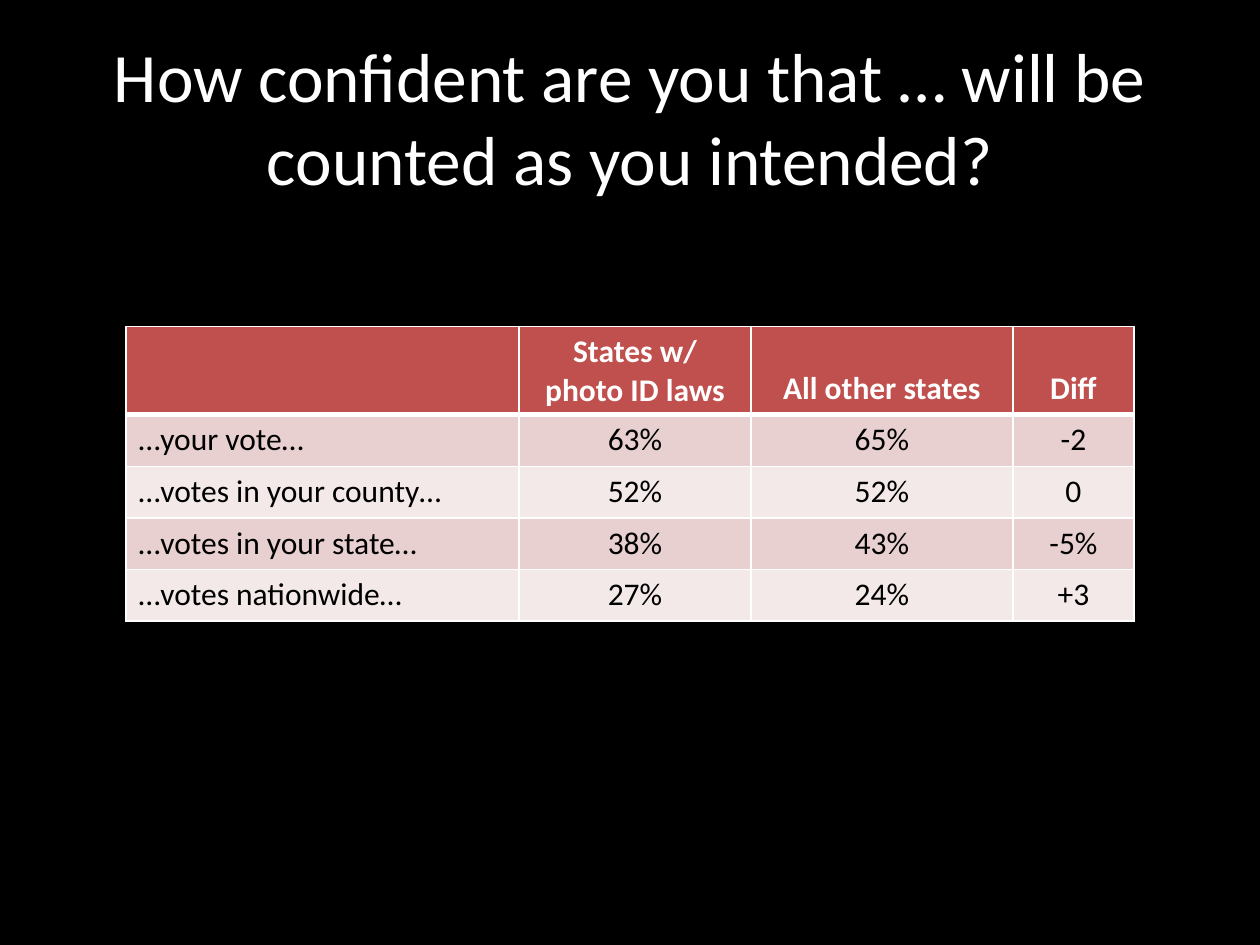
from lxml.etree import SubElement
from pptx import Presentation
from pptx.dml.color import RGBColor
from pptx.enum.text import MSO_ANCHOR, PP_ALIGN
from pptx.oxml.ns import qn
from pptx.util import Inches, Pt

# Content
TITLE = "How confident are you that … will be counted as you intended?"
HEADER = ("", "States w/ photo ID laws", "All other states", "Diff")
ANSWERS = [
    ("…your vote…", "63%", "65%", "-2"),
    ("…votes in your county…", "52%", "52%", "0"),
    ("…votes in your state…", "38%", "43%", "-5%"),
    ("…votes nationwide…", "27%", "24%", "+3"),
]

# Look
FONT = "Calibri"
COLORS = {"black": "000000", "white": "FFFFFF", "header": "C0504D",
          "odd": "E8D0D0", "even": "F4E9E9"}
COLUMN_WIDTHS = (3.12, 1.84, 2.08, 0.96)
HEADER_HEIGHT, ANSWER_HEIGHT = 0.7, 0.41


def color(name):
    return RGBColor.from_string(COLORS[name])


def write(frame, text, size, ink, bold=False, align=PP_ALIGN.CENTER):
    paragraph = frame.paragraphs[0]
    paragraph.alignment = align
    if not text:
        return
    run = paragraph.add_run()
    run.text = text
    run.font.name = FONT
    run.font.size = Pt(size)
    run.font.bold = bold
    run.font.color.rgb = color(ink)


def add_borders(cell, top, bottom):
    properties = cell._tc.get_or_add_tcPr()
    for side, width in (("L", 1), ("R", 1), ("T", top), ("B", bottom)):
        line = SubElement(properties, qn(f"a:ln{side}"), w=str(Pt(width)))
        fill = SubElement(line, qn("a:solidFill"))
        SubElement(fill, qn("a:srgbClr"), val=COLORS["white"])


prs = Presentation()
prs.slide_width, prs.slide_height = Inches(10), Inches(7.5)
slide = prs.slides.add_slide(prs.slide_layouts[6])
slide.background.fill.solid()
slide.background.fill.fore_color.rgb = color("black")

# Title
title = slide.shapes.add_textbox(Inches(0.5), Inches(0.3), Inches(9), Inches(1.25))
title.text_frame.word_wrap = True
title.text_frame.vertical_anchor = MSO_ANCHOR.MIDDLE
write(title.text_frame, TITLE, 39.6, "white")

# Confidence table
rows = [HEADER, *ANSWERS]
table_height = HEADER_HEIGHT + ANSWER_HEIGHT * len(ANSWERS)
confidence = slide.shapes.add_table(
    len(rows), len(HEADER), Inches(1), Inches(2.59),
    Inches(sum(COLUMN_WIDTHS)), Inches(table_height)).table
for column, width in zip(confidence.columns, COLUMN_WIDTHS):
    column.width = Inches(width)

for r, row in enumerate(rows):
    is_header = r == 0
    confidence.rows[r].height = Inches(HEADER_HEIGHT if is_header else ANSWER_HEIGHT)
    band = "header" if is_header else "odd" if r % 2 else "even"
    for c, text in enumerate(row):
        cell = confidence.cell(r, c)
        # A thick rule separates the header from the answers
        add_borders(cell, top=3 if r == 1 else 1, bottom=3 if is_header else 1)
        cell.fill.solid()
        cell.fill.fore_color.rgb = color(band)
        cell.vertical_anchor = MSO_ANCHOR.BOTTOM if is_header else MSO_ANCHOR.TOP
        write(cell.text_frame, text, 18, "white" if is_header else "black",
              bold=is_header,
              align=PP_ALIGN.LEFT if c == 0 else PP_ALIGN.CENTER)

prs.save("out.pptx")
